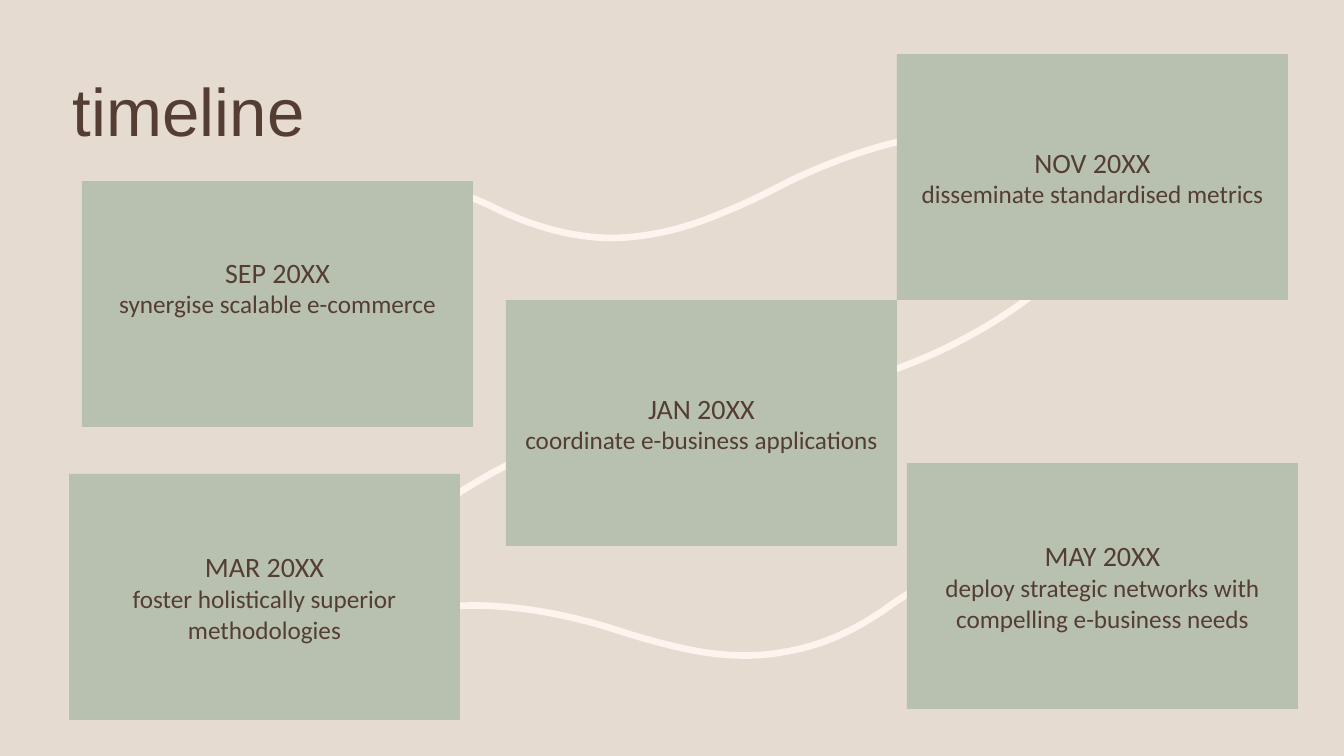
import pptx
import pptx.util
import pptx.dml.color
import pptx.enum.shapes
import pptx.enum.text
import pptx.oxml
import pptx.oxml.ns

TITLE = ("timeline", (63, 78, 1008, 74))
CARD_SIZE = (391, 246)
CARDS = [
    ("SEP 20XX", "synergise scalable e-commerce", (82, 181), 34),
    ("NOV 20XX", "disseminate standardised metrics", (897, 54), 0),
    ("JAN 20XX", "coordinate e-business applications", (506, 300), 0),
    ("MAR 20XX", "foster holistically superior methodologies", (69, 474), 0),
    ("MAY 20XX", "deploy strategic networks with compelling e-business needs", (907, 463), 0),
]
CURVES = [
    [(840, 386), (920, 366), (993, 330), (1055, 277)],
    [(589, 431), (513, 456), (449, 494), (392, 543)],
    [(309, 225), (353, 189), (401, 178), (453, 192),
     (470, 196), (485, 203), (501, 211),
     (534, 226), (570, 237), (609, 238),
     (642, 238), (675, 231), (707, 219),
     (743, 205), (763, 195), (784, 184),
     (808, 172), (948, 104), (1035, 147)],
    [(927, 584), (911, 591), (898, 600), (884, 610),
     (855, 630), (822, 646), (784, 652),
     (752, 658), (720, 656), (686, 649),
     (650, 641), (629, 634), (607, 627),
     (583, 620), (437, 575), (350, 641)],
]
THEME = {
    "background": "E6DBD0", "card": "B8C0B0", "curve": "FEF3ED", "text": "543E34",
    "title": {"name": "Arial", "size": 48},
    "date": {"name": "Calibri", "size": 20},
    "detail": {"name": "Calibri", "size": 18},
    "curve_width": 4.75,
}
SLIDE_SIZE = (1344, 756)
SCALE = 12192000 / 1344


def px(*lengths):
    return [pptx.util.Emu(round(n * SCALE)) for n in lengths]


def paint(fill, name):
    fill.solid()
    fill.fore_color.rgb = pptx.dml.color.RGBColor.from_string(THEME[name])


def write(p, text, style):
    r = p.add_run()
    r.text = text
    formats = THEME[style]
    for key, value in {**formats, "size": pptx.util.Pt(formats["size"])}.items():
        setattr(r.font, key, value)
    paint(r.font.fill, "text")


def set_frame(tf, bottom=5):
    left, top, low = px(10, 5, bottom)
    formats = {
        "word_wrap": True, "vertical_anchor": pptx.enum.text.MSO_ANCHOR.MIDDLE,
        "margin_left": left, "margin_right": left, "margin_top": top, "margin_bottom": low,
    }
    for key, value in formats.items():
        setattr(tf, key, value)


def add_curve(s, points):
    builder = s.shapes.build_freeform(*points[0], scale=SCALE)
    builder.add_line_segments(points[1:], close=False)
    sp = builder.convert_to_shape()
    sp.shadow.inherit = False
    sp.fill.background()
    paint(sp.line.fill, "curve")
    sp.line.width = pptx.util.Pt(THEME["curve_width"])
    steps = list(sp._element.iter(pptx.oxml.ns.qn("a:lnTo")))
    for i in range(0, len(steps), 3):
        bezier = pptx.oxml.xmlchemy.OxmlElement("a:cubicBezTo")
        steps[i].addprevious(bezier)
        for step in steps[i:i + 3]:
            bezier.append(step[0])
            step.getparent().remove(step)


def add_card(s, date, detail, corner, lift):
    sp = s.shapes.add_shape(pptx.enum.shapes.MSO_SHAPE.RECTANGLE, *px(*corner, *CARD_SIZE))
    sp.shadow.inherit = False
    paint(sp.fill, "card")
    sp.line.fill.background()
    tf = sp.text_frame
    set_frame(tf, 5 + lift)
    write(tf.paragraphs[0], date, "date")
    write(tf.add_paragraph(), detail, "detail")
    for p in tf.paragraphs:
        p.alignment = pptx.enum.text.PP_ALIGN.CENTER


def main():
    prs = pptx.Presentation()
    prs.slide_width, prs.slide_height = px(*SLIDE_SIZE)
    s = prs.slides.add_slide(prs.slide_layouts[6])
    paint(s.background.fill, "background")
    for points in CURVES:
        add_curve(s, points)
    text, box = TITLE
    tf = s.shapes.add_textbox(*px(*box)).text_frame
    set_frame(tf)
    tf.paragraphs[0].line_spacing = 0.9
    write(tf.paragraphs[0], text, "title")
    for card in CARDS:
        add_card(s, *card)
    prs.save("out.pptx")


if __name__ == "__main__":
    main()
